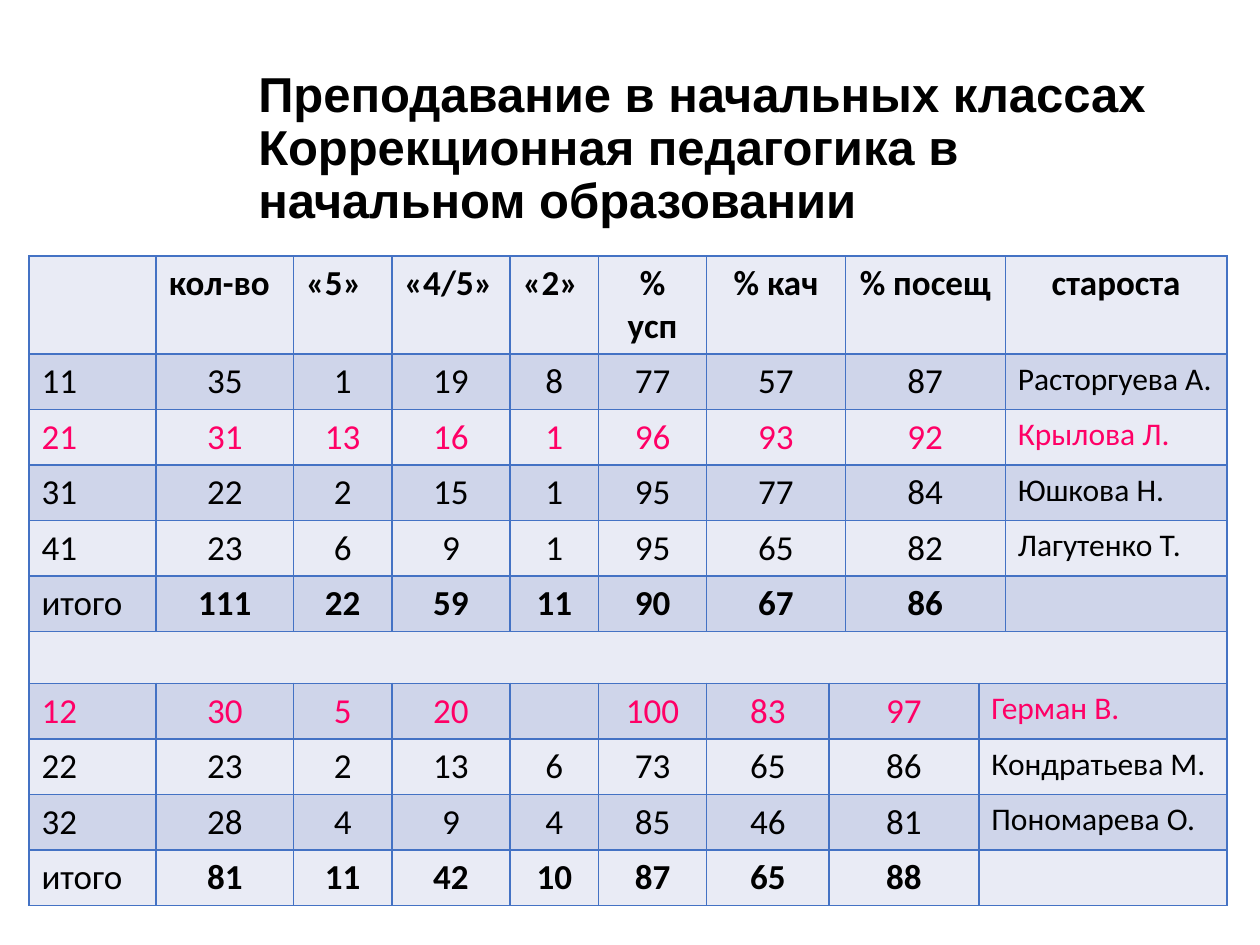
from lxml import etree
from pptx import Presentation
from pptx import util as u
from pptx.dml.color import RGBColor
from pptx.enum import text
from pptx.oxml.ns import qn

BLACK, PINK, BORDER = "000000", "FF0066", "4472C4"
BANDS = ("E9EBF5", "CFD5EA")
LEFT, CENTER = text.PP_ALIGN.LEFT, text.PP_ALIGN.CENTER


def rgb(value):
    return RGBColor.from_string(value)


class Deck:
    """Holds the style and the current slide."""

    def __init__(self, width, height):
        self.prs = Presentation()
        self.prs.slide_width = u.Inches(width)
        self.prs.slide_height = u.Inches(height)
        self.slide = self.prs.slides.add_slide(self.prs.slide_layouts[5])

    def format(self, paragraph, font_name, size, color, bold, align):
        paragraph.alignment = align
        font = paragraph.font
        font.name, font.size, font.bold = font_name, u.Pt(size), bold
        font.color.rgb = rgb(color)

    def title(self, wording, left, top, width, height):
        heading = self.slide.shapes.title
        heading.left, heading.top = u.Inches(left), u.Inches(top)
        heading.width, heading.height = u.Inches(width), u.Inches(height)
        frame = heading.text_frame
        frame.text = wording
        frame.word_wrap = True
        frame.auto_size = text.MSO_AUTO_SIZE.NONE
        frame.vertical_anchor = text.MSO_ANCHOR.MIDDLE
        paragraph = frame.paragraphs[0]
        paragraph.line_spacing = 0.9
        self.format(paragraph, "Arial", 28, BLACK, True, LEFT)

    def table(self, left, top, widths, row_height, row_count):
        frame = self.slide.shapes.add_table(
            row_count, len(widths), u.Inches(left), u.Inches(top),
            u.Inches(sum(widths)), u.Inches(row_height * row_count))
        grid = frame.table
        grid.first_row = grid.horz_banding = False
        for column, width in zip(grid.columns, widths):
            column.width = u.Inches(width)
        for r, row in enumerate(grid.rows):
            for cell in row.cells:
                self.border(cell)
                cell.fill.solid()
                cell.fill.fore_color.rgb = rgb(BANDS[r % 2])
        return grid

    def border(self, cell):
        props = cell._tc.get_or_add_tcPr()
        for side in ("a:lnL", "a:lnR", "a:lnT", "a:lnB"):
            line = etree.SubElement(props, qn(side), w=str(u.Pt(1)))
            fill = etree.SubElement(line, qn("a:solidFill"))
            etree.SubElement(fill, qn("a:srgbClr"), val=BORDER)

    def cell(self, cell, wording, size, color, bold, align):
        cell.text = wording
        self.format(cell.text_frame.paragraphs[0], "Calibri", size, color, bold, align)


# Group results: class, counts, percentages, class leader
HEADER = ["", "кол-во", "«5»", "«4/5»", "«2»", "% усп", "% кач", "% посещ", "староста"]
RESULTS = [
    HEADER,
    ["11", "35", "1", "19", "8", "77", "57", "87", "Расторгуева А."],
    ["21", "31", "13", "16", "1", "96", "93", "92", "Крылова Л."],
    ["31", "22", "2", "15", "1", "95", "77", "84", "Юшкова Н."],
    ["41", "23", "6", "9", "1", "95", "65", "82", "Лагутенко Т."],
    ["итого", "111", "22", "59", "11", "90", "67", "86", ""],
    [],
    ["12", "30", "5", "20", "", "100", "83", "97", "Герман В."],
    ["22", "23", "2", "13", "6", "73", "65", "86", "Кондратьева М."],
    ["32", "28", "4", "9", "4", "85", "46", "81", "Пономарева О."],
    ["итого", "81", "11", "42", "10", "87", "65", "88", ""],
]
BEST_GROUPS = ("21", "12")
GAP_ROW = RESULTS.index([])
WIDTHS = [1.01, 1.09, 0.78, 0.94, 0.7, 0.86, 0.97, 0.13, 1.06, 0.21, 1.76]
# First grid column of each field, above and below the gap row
UPPER_STARTS = [0, 1, 2, 3, 4, 5, 6, 8, 10]
LOWER_STARTS = [0, 1, 2, 3, 4, 5, 6, 7, 9]


def fill_results(deck, grid):
    last_field = len(HEADER) - 1
    for r, values in enumerate(RESULTS):
        if not values:
            grid.cell(r, 0).merge(grid.cell(r, len(WIDTHS) - 1))
            continue
        starts = UPPER_STARTS if r < GAP_ROW else LOWER_STARTS
        ends = starts[1:] + [len(WIDTHS)]
        is_header, is_total = r == 0, values[0] == "итого"
        color = PINK if values[0] in BEST_GROUPS else BLACK
        for field, (value, start, end) in enumerate(zip(values, starts, ends)):
            if end - start > 1:
                grid.cell(r, start).merge(grid.cell(r, end - 1))
            if not value:
                continue
            is_leader = field == last_field and not is_header
            at_left = field < 5 if is_header else field in (0, last_field)
            deck.cell(grid.cell(r, start), value, 18 if is_leader else 20, color,
                      is_header or (is_total and field > 0),
                      LEFT if at_left else CENTER)


def main():
    deck = Deck(10, 7.5)
    deck.title("Преподавание в начальных классах\v"
               "Коррекционная педагогика в начальном образовании",
               1.95, 0.47, 7.8, 1.44)
    grid = deck.table(0.23, 2.03, WIDTHS, 0.41, len(RESULTS))
    fill_results(deck, grid)
    deck.prs.save("out.pptx")


if __name__ == "__main__":
    main()
